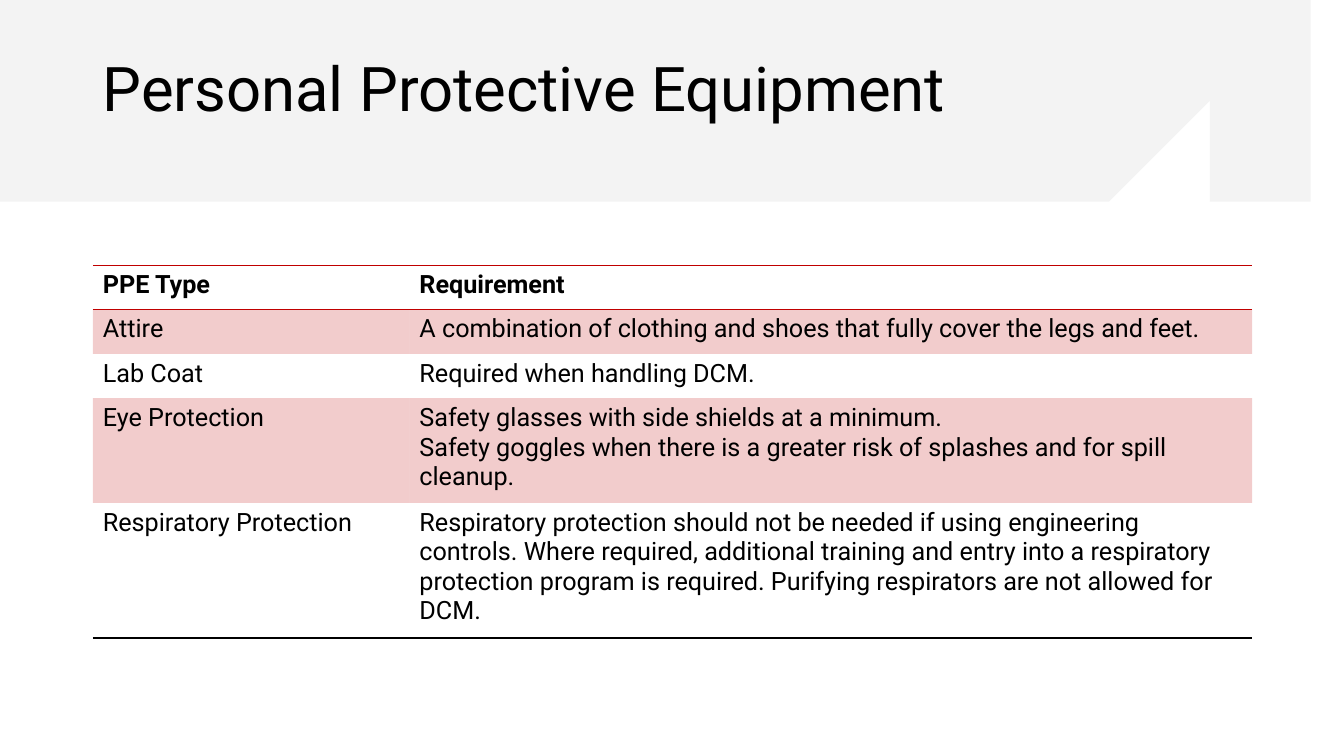
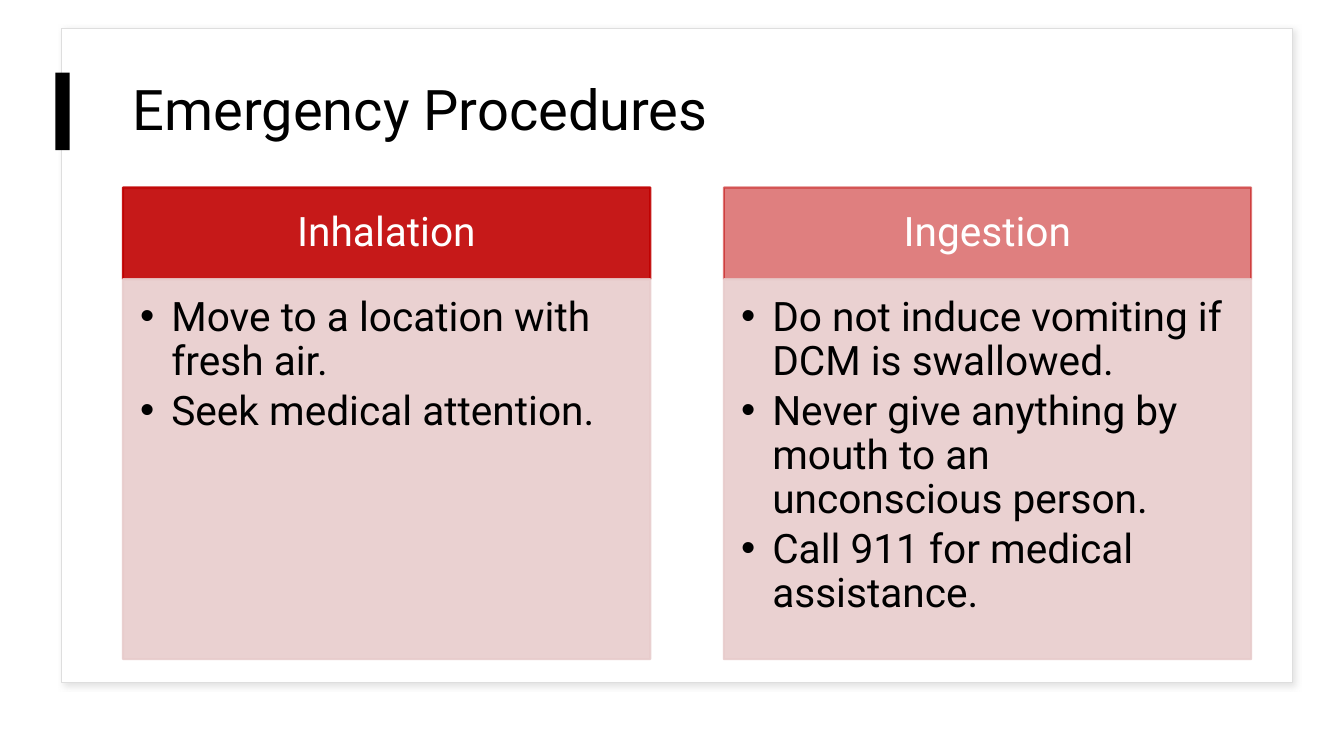
"""Build two laboratory safety slides: protective equipment and emergency procedures."""
from dataclasses import dataclass

from lxml import etree
from pptx import Presentation
from pptx.dml.color import RGBColor
from pptx.enum.shapes import MSO_SHAPE
from pptx.enum.text import MSO_ANCHOR, PP_ALIGN
from pptx.oxml.ns import qn
from pptx.util import Inches, Pt

RECTANGLE = MSO_SHAPE.RECTANGLE
MIDDLE, TOP = MSO_ANCHOR.MIDDLE, MSO_ANCHOR.TOP
LEFT, CENTER = PP_ALIGN.LEFT, PP_ALIGN.CENTER
PLAIN_TABLE_STYLE = "{2D5ABB26-0587-4C30-8999-92F81FD0307C}"


@dataclass(frozen=True)
class Theme:
    """Colours, type sizes and measures shared by the slides."""
    font: str = "Roboto"
    ink: str = "000000"
    paper: str = "FFFFFF"
    accent: str = "C00000"
    card: str = "E8CCCC"
    torn: str = "E8E8E8"
    frame: str = "DEDEDE"
    shadow: str = "C5C5C5"
    title_size: int = 44
    framed_title_size: int = 40
    card_size: int = 29
    table_size: int = 18
    line_spacing: float = 0.9
    width: float = 13.33
    height: float = 7.5


THEME = Theme()

TORN_SLOPE = [(0, 2.59), (0.46, 2.36), (0.82, 2.21), (1.2, 2.08), (1.2, 2.15),
              (1.5, 2.06), (2, 1.95)]
TORN_RIDGE = [
    (2.39, 1.77), (2.69, 1.58), (3.08, 1.5), (3.25, 1.61), (3.35, 1.51), (3.5, 1.61),
    (3.76, 1.49), (4.16, 1.65), (4.37, 1.64), (4.4, 1.75), (4.6, 1.73), (4.71, 1.96),
    (5.03, 1.91), (5.27, 1.8), (5.68, 1.83), (5.72, 1.92), (5.86, 1.91), (5.87, 2.08),
    (6.12, 1.94), (6.4, 1.92), (6.57, 2.02), (6.8, 1.93), (7.1, 1.86), (7.4, 1.88),
    (7.47, 1.94),
]
MIRROR_STRETCH = 1.16

EQUIPMENT = [
    ("PPE Type", ["Requirement"]),
    ("Attire", ["A combination of clothing and shoes that fully cover the legs and feet."]),
    ("Lab Coat", ["Required when handling DCM."]),
    ("Eye Protection", [
        "Safety glasses with side shields at a minimum.",
        "Safety goggles when there is a greater risk of splashes and for spill cleanup.",
    ]),
    ("Respiratory Protection", [
        "Respiratory protection should not be needed if using engineering controls. "
        "Where required, additional training and entry into a respiratory protection "
        "program is required. Purifying respirators are not allowed for DCM.",
    ]),
]
EQUIPMENT_COLUMNS = (3.14, 8.36)
EQUIPMENT_ROWS = (0.44, 0.44, 0.44, 1.04, 1.34)

PROCEDURES = [
    ("Inhalation", 90, ["Move to a location with fresh air.", "Seek medical attention."]),
    ("Ingestion", 50, [
        "Do not induce vomiting if DCM is swallowed.",
        "Never give anything by mouth to an unconscious person.",
        "Call 911 for medical assistance.",
    ]),
]


def rgb(code):
    """Turn a hex code into a colour."""
    return RGBColor.from_string(code)


def add_child(parent, tag, **attributes):
    """Append a drawing element with the given attributes."""
    names = {name: str(value) for name, value in attributes.items()}
    return etree.SubElement(parent, qn(tag), names)


def set_opacity(properties, percent):
    """Give every colour in the properties the same opacity."""
    for colour in properties.iter(qn("a:srgbClr")):
        add_child(colour, "a:alpha", val=percent * 1000)


def paint(shape, fill, line=None, weight=1, opacity=100):
    """Set the fill, outline and opacity of a shape."""
    shape.shadow.inherit = False
    shape.fill.solid()
    shape.fill.fore_color.rgb = rgb(fill)
    if line:
        shape.line.color.rgb = rgb(line)
        shape.line.width = Pt(weight)
    else:
        shape.line.fill.background()
    if opacity < 100:
        set_opacity(shape._element.spPr, opacity)


def add_block(slide, box, fill, **look):
    """Add a painted rectangle."""
    block = slide.shapes.add_shape(RECTANGLE, *map(Inches, box))
    paint(block, fill, **look)
    return block


def write(frame, lines, size, colour, bold=False, align=LEFT, spacing=None):
    """Write one paragraph per line and format its runs."""
    frame.word_wrap = True
    frame.text = "\n".join(lines)
    for paragraph in frame.paragraphs:
        paragraph.alignment = align
        paragraph.line_spacing = spacing
        for run in paragraph.runs:
            run.font.name = THEME.font
            run.font.size = Pt(size)
            run.font.bold = bold
            run.font.color.rgb = rgb(colour)


def set_margins(frame, left, top, right, bottom):
    """Set the four insets of a text frame."""
    frame.margin_left, frame.margin_top = Inches(left), Inches(top)
    frame.margin_right, frame.margin_bottom = Inches(right), Inches(bottom)


def add_title(slide, text, box, size):
    """Add a slide title."""
    frame = slide.shapes.add_textbox(*map(Inches, box)).text_frame
    frame.vertical_anchor = MIDDLE
    write(frame, [text], size, THEME.ink, spacing=THEME.line_spacing)


def add_torn_band(slide):
    """Add the pale band whose torn ridge is mirrored and stretched to the right."""
    middle = TORN_RIDGE[-1][0]
    mirrored = [(min(middle + (middle - x) * MIRROR_STRETCH, THEME.width), y)
                for x, y in reversed(TORN_RIDGE[:-1])]
    outline = [*TORN_SLOPE, *TORN_RIDGE, *mirrored, (THEME.width, 0)]
    builder = slide.shapes.build_freeform(0, 0, scale=Inches(1))
    builder.add_line_segments(outline, close=True)
    paint(builder.convert_to_shape(), THEME.torn, opacity=50)


def add_border(cell, side, colour, weight=1):
    """Draw one border of a table cell."""
    border = add_child(cell._tc.get_or_add_tcPr(), side, w=Pt(weight))
    add_child(add_child(border, "a:solidFill"), "a:srgbClr", val=colour)


def fill_cell(cell, lines, row, last_row):
    """Write a table cell with its rules and banding."""
    write(cell.text_frame, lines, THEME.table_size, THEME.ink, bold=row == 0)
    if row == 0:
        add_border(cell, "a:lnT", THEME.accent)
        add_border(cell, "a:lnB", THEME.accent)
    elif row == last_row:
        add_border(cell, "a:lnB", THEME.ink)
    if row % 2:
        cell.fill.solid()
        cell.fill.fore_color.rgb = rgb(THEME.accent)
        set_opacity(cell._tc.tcPr.find(qn("a:solidFill")), 20)
    else:
        cell.fill.background()


def add_equipment_table(slide, left, top):
    """Add the table of equipment and requirements."""
    size = (sum(EQUIPMENT_COLUMNS), sum(EQUIPMENT_ROWS))
    frame = slide.shapes.add_table(len(EQUIPMENT), len(EQUIPMENT_COLUMNS),
                                   *map(Inches, (left, top, *size)))
    table = frame.table
    table.first_row = table.horz_banding = False
    table._tbl.tblPr.find(qn("a:tableStyleId")).text = PLAIN_TABLE_STYLE
    for column, width in zip(table.columns, EQUIPMENT_COLUMNS):
        column.width = Inches(width)
    for index, (kind, requirement) in enumerate(EQUIPMENT):
        table.rows[index].height = Inches(EQUIPMENT_ROWS[index])
        for column, lines in enumerate(([kind], requirement)):
            fill_cell(table.cell(index, column), lines, index, len(EQUIPMENT) - 1)


def add_frame(slide):
    """Add the outlined panel with a soft shadow and its black marker."""
    panel = add_block(slide, (0.61, 0.28, 12.21, 6.49), THEME.paper, line=THEME.frame)
    effects = panel._element.spPr.find(qn("a:effectLst"))
    shadow = add_child(effects, "a:outerShdw", blurRad=Pt(4), dist=Pt(3),
                       dir=45 * 60000, algn="tl", rotWithShape=0)
    add_child(shadow, "a:srgbClr", val=THEME.shadow)
    set_opacity(effects, 50)
    add_block(slide, (0.55, 0.72, 0.14, 0.77), THEME.ink)


def add_bullets(frame, lines):
    """Write a bulleted list with hanging indents."""
    write(frame, lines, THEME.card_size, THEME.ink, spacing=THEME.line_spacing)
    for paragraph in frame.paragraphs:
        paragraph.space_after = Pt(4.5)
        properties = paragraph._p.get_or_add_pPr()
        properties.set("marL", str(Inches(0.31)))
        properties.set("indent", str(-Inches(0.31)))
        add_child(properties, "a:buFont", typeface="Arial")
        add_child(properties, "a:buChar", char="•")


def add_procedure(slide, left, heading, opacity, steps):
    """Add a heading bar above its card of steps."""
    top, width, bar_height, card_height = 1.86, 5.23, 0.91, 3.77
    bar = add_block(slide, (left, top, width, bar_height), THEME.accent,
                    line=THEME.accent, weight=1.5, opacity=opacity).text_frame
    set_margins(bar, 0.23, 0.13, 0.23, 0.13)
    bar.vertical_anchor = MIDDLE
    write(bar, [heading], THEME.card_size, THEME.paper, align=CENTER,
          spacing=THEME.line_spacing)
    card = add_block(slide, (left, top + bar_height, width, card_height), THEME.card,
                     line=THEME.card, weight=1.5, opacity=90).text_frame
    set_margins(card, 0.17, 0.17, 0.23, 0.25)
    card.vertical_anchor = TOP
    add_bullets(card, steps)


def build_equipment_slide(slide):
    """Compose the protective equipment slide."""
    add_torn_band(slide)
    add_title(slide, "Personal Protective Equipment", (0.92, 0.4, 11.5, 1.02),
              THEME.title_size)
    add_equipment_table(slide, 0.92, 2.63)


def build_emergency_slide(slide):
    """Compose the emergency procedures slide."""
    first_left, pitch = 1.22, 5.96
    add_frame(slide)
    add_title(slide, "Emergency Procedures", (first_left, 0.56, 11.19, 1.11),
              THEME.framed_title_size)
    for index, procedure in enumerate(PROCEDURES):
        add_procedure(slide, first_left + index * pitch, *procedure)


def main():
    """Build and save the presentation."""
    deck = Presentation()
    deck.slide_width, deck.slide_height = Inches(THEME.width), Inches(THEME.height)
    blank = deck.slide_layouts[6]
    for build in (build_equipment_slide, build_emergency_slide):
        build(deck.slides.add_slide(blank))
    deck.save("out.pptx")


if __name__ == "__main__":
    main()
